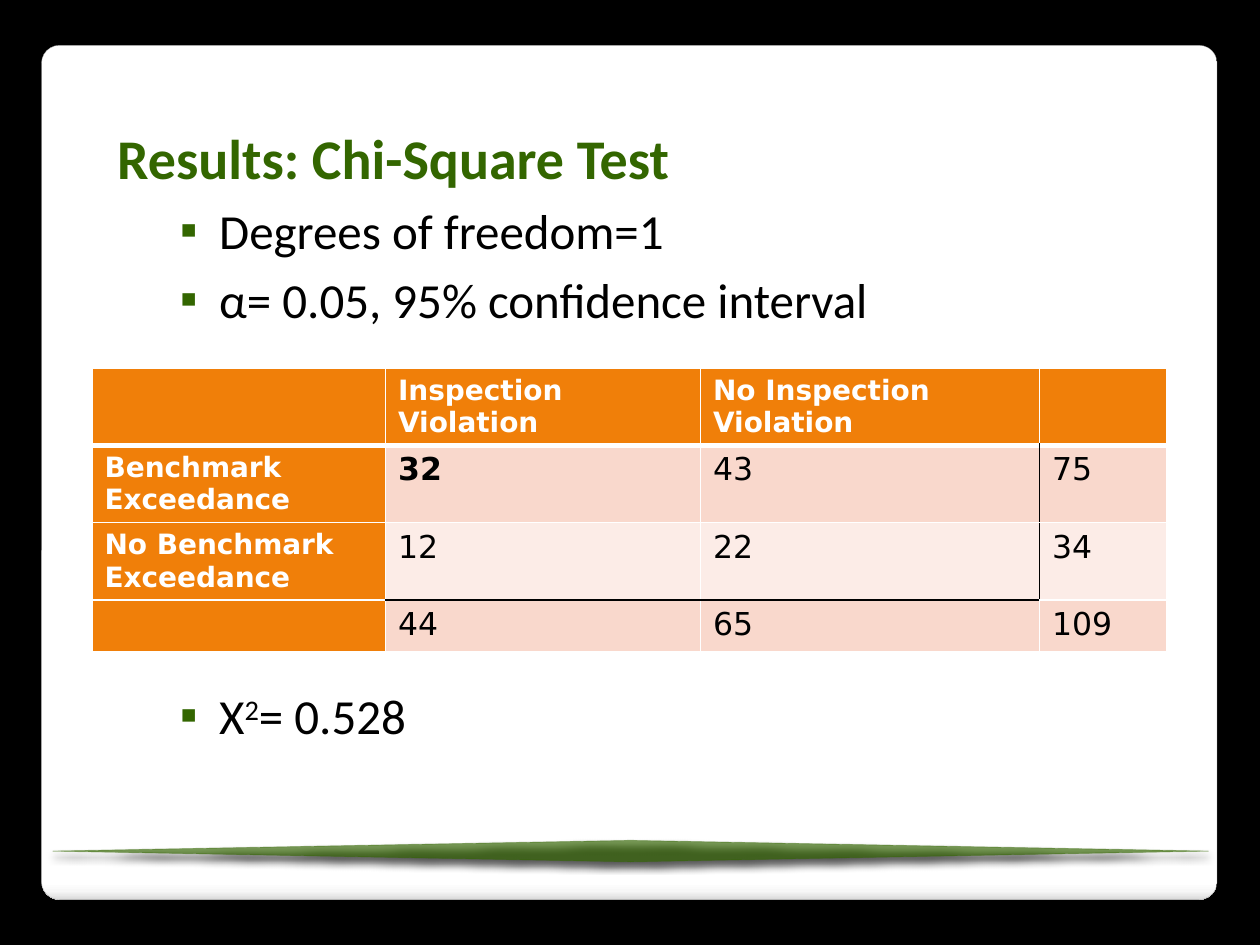
from lxml import etree
from pptx import Presentation
from pptx.dml.color import RGBColor
from pptx.enum.shapes import MSO_SHAPE
from pptx.enum.text import MSO_ANCHOR, MSO_AUTO_SIZE, PP_ALIGN
from pptx.oxml import parse_xml
from pptx.oxml.ns import qn
from pptx.util import Inches, Pt

ROUND, DIAMOND = MSO_SHAPE.ROUNDED_RECTANGLE, MSO_SHAPE.FLOWCHART_DECISION
TOP, LEFT, FIXED = MSO_ANCHOR.TOP, PP_ALIGN.LEFT, MSO_AUTO_SIZE.NONE
NS = 'xmlns:a="http://schemas.openxmlformats.org/drawingml/2006/main"'
HEX = {"black": "000000", "white": "FFFFFF", "green": "336600", "orange": "F07F09",
       "pink": "F9D8CC", "pale": "FCECE7", "edge": "A4A4A4"}

TITLE = "Results: Chi-Square Test"
POINTS = [
    ([("Degrees of freedom=1", 0)], 0),
    ([("α= 0.05, 95% confidence interval", 0)], 5.6),
    ([("Χ", 0), ("2", 30), ("= 0.528", 0)], 204.5),
]
GRID = [
    ["", "Inspection Violation", "No Inspection Violation", ""],
    ["Benchmark Exceedance", "32", "43", "75"],
    ["No Benchmark Exceedance", "12", "22", "34"],
    ["", "44", "65", "109"],
]
COLS = [2.33, 2.5, 2.69, 1.01]
ROWS = [0.61, 0.61, 0.61, 0.41]
FADE = [(0, "FFFFFF"), (98, "FFFFFF"), (99, "F7F7F7"), (100, "DADADA")]


def tint(name):
    return RGBColor.from_string(HEX[name])


def say(par, text, size=18, font="Calibri", color="black", bold=False, base=0):
    run = par.add_run()
    run.text = text
    run.font.size, run.font.name, run.font.bold = Pt(size), font, bold
    run.font.color.rgb = tint(color)
    if base:
        run._r.get_or_add_rPr().set("baseline", str(base * 1000))


def place(shape, left, top, width, height):
    shape.left, shape.top = Inches(left), Inches(top)
    shape.width, shape.height = Inches(width), Inches(height)
    frame = shape.text_frame
    frame.word_wrap, frame.auto_size, frame.vertical_anchor = True, FIXED, TOP
    return frame


def dot(par):
    props = par._p.get_or_add_pPr()
    props.set("marL", str(Inches(0.81)))
    props.set("indent", str(Inches(-0.31)))
    for tag, key, val in [("buFont", "typeface", "Calibri"), ("buChar", "char", "▪")]:
        etree.SubElement(props, qn("a:" + tag)).set(key, val)
    mark = parse_xml(f'<a:buClr {NS}><a:srgbClr val="{HEX["green"]}"/></a:buClr>')
    props.find(qn("a:buFont")).addprevious(mark)


def shade(shape, alpha, blur, dist):
    shape.shadow.inherit = False
    shape._element.spPr.find(qn("a:effectLst")).append(parse_xml(
        f'<a:outerShdw {NS} blurRad="{Pt(blur)}" dist="{Pt(dist)}" dir="5400000" '
        f'algn="t" rotWithShape="0"><a:srgbClr val="{HEX["black"]}">'
        f'<a:alpha val="{alpha * 1000}"/></a:srgbClr></a:outerShdw>'))


def clear(fill, alpha):
    color = fill._xPr.find(qn("a:solidFill"))[0]
    etree.SubElement(color, qn("a:alpha")).set("val", str(alpha * 1000))


def rule(cell, sides):
    props = cell._tc.get_or_add_tcPr()
    for spot, (side, (name, width)) in enumerate(sides.items()):
        props.insert(spot, parse_xml(
            f'<a:ln{side} {NS} w="{Pt(width)}"><a:solidFill>'
            f'<a:srgbClr val="{HEX[name]}"/></a:solidFill></a:ln{side}>'))


def frame_cell(row, col):
    sides = dict.fromkeys("LRTB", ("white", 1))
    ink = ("black", 1)
    if row == 0:
        sides["B"] = ("white", 3)
    if row == 1:
        sides["T"] = ("white", 3)
    if row in (1, 2) and col in (2, 3):
        sides["R" if col == 2 else "L"] = ink
    if row in (2, 3) and col in (1, 2):
        sides["B" if row == 2 else "T"] = ink
    return sides


def draw_panel(slide):
    panel = slide.shapes.add_shape(
        ROUND, Inches(0.33), Inches(0.36), Inches(9.33), Inches(6.78))
    panel.adjustments[0] = 0.021
    panel.line.color.rgb, panel.line.width = tint("edge"), Pt(0.16)
    stops = "".join(f'<a:gs pos="{pos * 1000}"><a:srgbClr val="{val}"/></a:gs>'
                    for pos, val in FADE)
    panel._element.spPr.find(qn("a:prstGeom")).addnext(parse_xml(
        f'<a:gradFill {NS}><a:gsLst>{stops}</a:gsLst>'
        '<a:lin ang="5400000" scaled="0"/></a:gradFill>'))
    shade(panel, 25, 6, 4)

    band = slide.shapes.add_shape(
        DIAMOND, Inches(0.42), Inches(6.67), Inches(9.17), Inches(0.17))
    band.fill.solid()
    band.fill.fore_color.rgb = tint("green")
    clear(band.fill, 65)
    band.line.color.rgb, band.line.width = tint("green"), Pt(0.5)
    clear(band.line.fill, 36)
    shade(band, 65, 4, 3)
    for spot, shape in enumerate((panel, band), 2):
        slide.shapes._spTree.insert(spot, shape._element)


def draw_text(slide):
    head = place(slide.shapes.title, 0.83, 0.93, 8.58, 0.6).paragraphs[0]
    head.alignment = LEFT
    say(head, TITLE, size=32, color="green", bold=True)
    body = place(slide.placeholders[1], 0.83, 1.54, 8.58, 4.8)
    for spot, (runs, gap) in enumerate(POINTS):
        par = body.add_paragraph() if spot else body.paragraphs[0]
        par.level, par.space_before = 1, Pt(gap)
        dot(par)
        for text, base in runs:
            say(par, text, size=28, base=base)


def draw_table(slide):
    table = slide.shapes.add_table(
        len(ROWS), len(COLS), Inches(0.73), Inches(2.92),
        Inches(sum(COLS)), Inches(sum(ROWS))).table
    for col, width in zip(table.columns, COLS):
        col.width = Inches(width)
    for row, (line, high) in enumerate(zip(GRID, ROWS)):
        table.rows[row].height = Inches(high)
        for col, text in enumerate(line):
            cell = table.cell(row, col)
            label = row == 0 or col == 0
            cell.fill.solid()
            cell.fill.fore_color.rgb = tint(
                "orange" if label else "pink" if row % 2 else "pale")
            rule(cell, frame_cell(row, col))
            if text:
                say(cell.text_frame.paragraphs[0], text, font="DejaVu Sans",
                    size=16 if label else 18, color="white" if label else "black",
                    bold=label or text == "32")


def main():
    deck = Presentation()
    deck.slide_width, deck.slide_height = Inches(10), Inches(7.5)
    slide = deck.slides.add_slide(deck.slide_layouts[1])
    slide.background.fill.solid()
    slide.background.fill.fore_color.rgb = tint("black")
    draw_panel(slide)
    draw_text(slide)
    draw_table(slide)
    deck.save("out.pptx")


if __name__ == "__main__":
    main()
